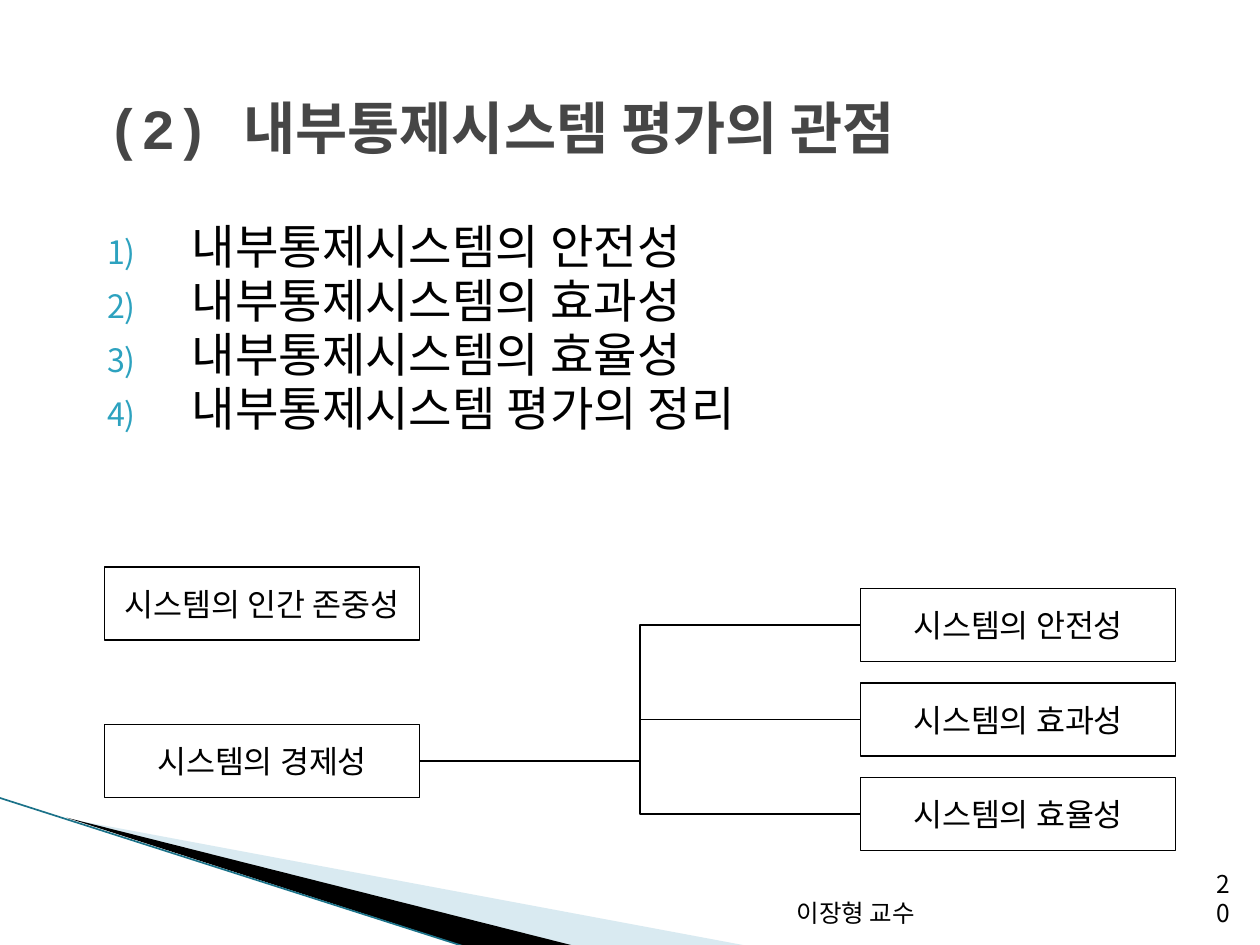
from lxml.etree import SubElement
from pptx import Presentation
from pptx.dml.color import RGBColor
from pptx.enum.shapes import MSO_CONNECTOR, MSO_SHAPE
from pptx.enum.text import MSO_ANCHOR, MSO_AUTO_SIZE, PP_ALIGN
from pptx.oxml.ns import qn
from pptx.util import Inches, Pt

# Content
TITLE = "(2) 내부통제시스템 평가의 관점"
TOPICS = [
    "내부통제시스템의 안전성",
    "내부통제시스템의 효과성",
    "내부통제시스템의 효율성",
    "내부통제시스템 평가의 정리",
]
QUALITIES = ["시스템의 인간 존중성", "시스템의 경제성"]
ECONOMY_PARTS = ["시스템의 안전성", "시스템의 효과성", "시스템의 효율성"]
FOOTERS = [("이장형 교수", 4.79, 2.57), ("20", 9.46, 0.4)]  # text, left, width

# Style
LATIN, KOREAN = "Courier New", "Noto Sans CJK KR"
BLACK, WHITE, GREY, TEAL = "000000", "FFFFFF", "464646", "2DA2BF"
BOX_WIDTH, BOX_HEIGHT = 2.5, 0.58
SWOOSHES = [  # points, colour, opacity in percent
    ([(0.55, 6.5), (5.95, 7.51), (4.56, 7.51)], "A0CBDC", 40),
    ([(0.53, 6.49), (4.57, 7.51), (3.72, 7.52)], BLACK, 100),
]


def color(value):
    return RGBColor.from_string(value)


def add_text(para, text, size, latin=KOREAN, fill=BLACK, bold=False):
    span = para.add_run()
    span.text = text
    font = span.font
    font.size, font.bold, font.name = Pt(size), bold, latin
    font.color.rgb = color(fill)
    SubElement(font._element, qn("a:ea"), typeface=KOREAN)


def place(shape, left, top, width, height):
    shape.left, shape.top = Inches(left), Inches(top)
    shape.width, shape.height = Inches(width), Inches(height)


def number_paragraph(para):
    properties = para._p.get_or_add_pPr()
    properties.set("marL", str(Inches(0.67)))
    properties.set("indent", str(-Inches(0.67)))
    bullet_color = SubElement(properties, qn("a:buClr"))
    SubElement(bullet_color, qn("a:srgbClr"), val=TEAL)
    SubElement(properties, qn("a:buSzPct"), val="68000")
    SubElement(properties, qn("a:buFont"), typeface=KOREAN)
    SubElement(properties, qn("a:buAutoNum"), type="arabicParenR")


def style_line(connector, fill, width):
    connector.line.color.rgb = color(fill)
    connector.line.width = Pt(width)
    SubElement(connector._element.spPr, qn("a:effectLst"))


def add_box(page, text, left, top):
    box = page.shapes.add_shape(
        MSO_SHAPE.RECTANGLE, Inches(left), Inches(top), Inches(BOX_WIDTH), Inches(BOX_HEIGHT))
    box.shadow.inherit = False
    box.fill.solid()
    box.fill.fore_color.rgb = color(WHITE)
    box.line.color.rgb = color(BLACK)
    box.line.width = Pt(0.75)
    frame = box.text_frame
    frame.word_wrap = False
    frame.vertical_anchor = MSO_ANCHOR.MIDDLE
    frame.paragraphs[0].alignment = PP_ALIGN.CENTER
    add_text(frame.paragraphs[0], text, 18)
    return box


deck = Presentation()
deck.slide_width, deck.slide_height = Inches(10), Inches(7.5)
page = deck.slides.add_slide(deck.slide_layouts[1])

# Corner decoration
for points, fill, opacity in SWOOSHES:
    corners = [(Inches(x), Inches(y)) for x, y in points]
    builder = page.shapes.build_freeform(*corners[0])
    builder.add_line_segments(corners[1:], close=True)
    swoosh = builder.convert_to_shape()
    swoosh.shadow.inherit = False
    swoosh.line.fill.background()
    swoosh.fill.solid()
    swoosh.fill.fore_color.rgb = color(fill)
    if opacity < 100:
        fill_color = swoosh._element.spPr.find(qn("a:solidFill"))[0]
        SubElement(fill_color, qn("a:alpha"), val=str(opacity * 1000))
edge = page.shapes.add_connector(
    MSO_CONNECTOR.STRAIGHT, Inches(-0.01), Inches(6.33), Inches(3.71), Inches(7.52))
style_line(edge, "1B7289", 0.95)

# Title
title = page.shapes.title
place(title, 0.75, 0.67, 8.5, 0.67)
title.text_frame.auto_size = MSO_AUTO_SIZE.NONE
title.text_frame.vertical_anchor = MSO_ANCHOR.MIDDLE
title.text_frame.paragraphs[0].alignment = PP_ALIGN.LEFT
add_text(title.text_frame.paragraphs[0], TITLE, 32.4, LATIN, GREY, True)

# Numbered topics
body = page.placeholders[1]
place(body, 0.75, 1.75, 8.5, 2.58)
frame = body.text_frame
frame.auto_size = MSO_AUTO_SIZE.NONE
for index, topic in enumerate(TOPICS):
    para = frame.add_paragraph() if index else frame.paragraphs[0]
    number_paragraph(para)
    para.line_spacing = 0.83
    para.space_before = Pt(4 if index else 0)
    add_text(para, topic, 27, LATIN)

# Footer and page number
for text, left, width in FOOTERS:
    footer = page.shapes.add_textbox(Inches(left), Inches(7.01), Inches(width), Inches(0.4))
    footer.text_frame.word_wrap = True
    footer.text_frame.vertical_anchor = MSO_ANCHOR.BOTTOM
    footer.text_frame.paragraphs[0].alignment = PP_ALIGN.RIGHT
    add_text(footer.text_frame.paragraphs[0], text, 14)

# Diagram: economy branches into its three parts
qualities = [add_box(page, text, 0.83, 4.5 + 1.25 * row) for row, text in enumerate(QUALITIES)]
parts = [add_box(page, text, 6.83, 4.67 + 0.75 * row) for row, text in enumerate(ECONOMY_PARTS)]
for part in parts:
    branch = page.shapes.add_connector(MSO_CONNECTOR.ELBOW, 0, 0, 0, 0)
    branch.begin_connect(qualities[-1], 3)
    branch.end_connect(part, 1)
    style_line(branch, BLACK, 0.75)

deck.save("out.pptx")
